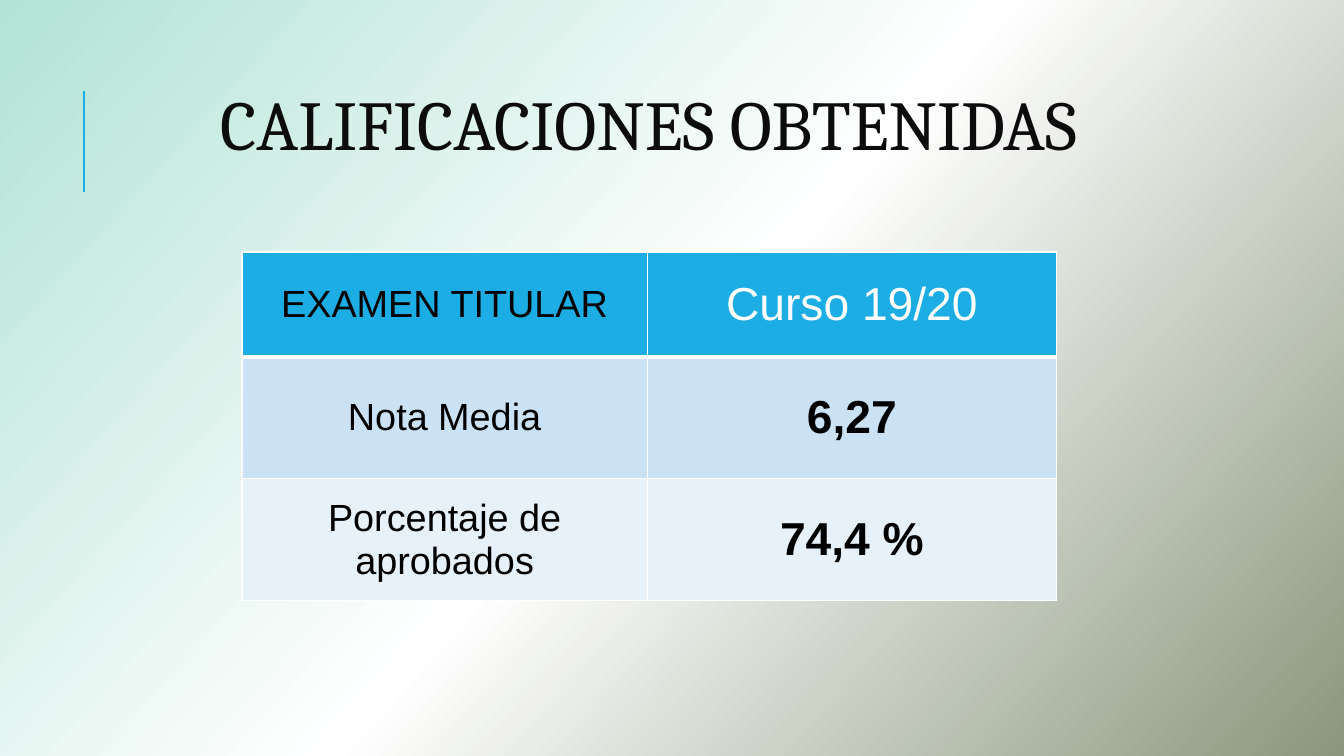
from copy import deepcopy

from lxml.etree import SubElement
from pptx import Presentation
from pptx.dml.color import RGBColor
from pptx.enum.shapes import MSO_CONNECTOR
from pptx.enum.text import MSO_ANCHOR, PP_ALIGN
from pptx.oxml.ns import qn
from pptx.util import Inches, Pt

COLORS = {
    "mint": "B2E3D5",
    "white": "FFFFFF",
    "olive": "8A977D",
    "accent": "1CADE4",
    "title": "0C0C0C",
    "black": "000000",
    "band_dark": "CBE2F5",
    "band_light": "E7F1FA",
}
GRADIENT = [(0, "mint"), (0.5, "white"), (1, "olive")]
COL_WIDTHS = [4.02, 4.06]
ROW_HEIGHTS = [1.04, 1.21, 1.21]
ROW_FILLS = ["accent", "band_dark", "band_light"]
GRADES = [
    ("EXAMEN TITULAR", "Curso 19/20"),
    ("Nota Media", "6,27"),
    ("Porcentaje de aprobados", "74,4 %"),
]


def rgb(name):
    return RGBColor.from_string(COLORS[name])


def style_text(tf, size, font, color, bold=False):
    p = tf.paragraphs[0]
    p.alignment = PP_ALIGN.CENTER
    r = p.runs[0]
    r.font.size = Pt(size)
    r.font.name = font
    r.font.bold = bold
    r.font.color.rgb = rgb(color)
    return p


def paint_background(s):
    fill = s.background.fill
    fill.gradient()
    fill.gradient_angle = 360 - 42
    stops = s.element.xpath(".//a:gsLst")[0]
    stops.append(deepcopy(stops[0]))
    for stop, (position, color) in zip(fill.gradient_stops, GRADIENT):
        stop.position = position
        stop.color.rgb = rgb(color)


def add_accent_line(s, x, top, bottom):
    line = s.shapes.add_connector(
        MSO_CONNECTOR.STRAIGHT, Inches(x), Inches(bottom), Inches(x), Inches(top))
    line.line.color.rgb = rgb("accent")
    line.line.width = Pt(1.5)
    SubElement(line.element.spPr, qn("a:effectLst"))


def add_title(s, left, top, width, height):
    sp = s.shapes.add_textbox(Inches(left), Inches(top), Inches(width), Inches(height))
    tf = sp.text_frame
    tf.word_wrap = True
    tf.vertical_anchor = MSO_ANCHOR.MIDDLE
    tf.text = "CALIFICACIONES OBTENIDAS"
    p = style_text(tf, 50, "Cambria", "title")
    p.line_spacing = 0.8


def add_borders(cell, widths):
    tc_pr = cell._tc.get_or_add_tcPr()
    for side, width in widths.items():
        ln = SubElement(tc_pr, qn(f"a:ln{side}"), w=str(Pt(width)))
        fill = SubElement(ln, qn("a:solidFill"))
        SubElement(fill, qn("a:srgbClr"), val=COLORS["white"])


def fill_cell(cell, text, row, col):
    rule_above = 3 if row == 1 else 1
    rule_below = 3 if row == 0 else 1
    add_borders(cell, {"L": 1, "R": 1, "T": rule_above, "B": rule_below})
    cell.fill.solid()
    cell.fill.fore_color.rgb = rgb(ROW_FILLS[row])
    cell.margin_left = cell.margin_right = cell.margin_top = cell.margin_bottom = 0
    cell.vertical_anchor = MSO_ANCHOR.MIDDLE
    cell.text_frame.text = text
    is_value = col == 1
    color = "white" if is_value and row == 0 else "black"
    style_text(cell.text_frame, 33 if is_value else 27, "Arial", color,
               is_value and row > 0)


def add_grades_table(s, left, top):
    table = s.shapes.add_table(
        len(GRADES), len(COL_WIDTHS), Inches(left), Inches(top),
        Inches(sum(COL_WIDTHS)), Inches(sum(ROW_HEIGHTS))).table
    for column, width in zip(table.columns, COL_WIDTHS):
        column.width = Inches(width)
    for row, (table_row, height) in enumerate(zip(table.rows, ROW_HEIGHTS)):
        table_row.height = Inches(height)
        for col, text in enumerate(GRADES[row]):
            fill_cell(table.cell(row, col), text, row, col)


def main():
    prs = Presentation()
    prs.slide_width = Inches(13.33)
    prs.slide_height = Inches(7.5)
    s = prs.slides.add_slide(prs.slide_layouts[6])
    paint_background(s)
    add_accent_line(s, 0.83, 0.9, 1.9)
    add_title(s, 1.12, 0.47, 10.63, 1.64)
    add_grades_table(s, 2.4, 2.5)
    prs.save("out.pptx")


if __name__ == "__main__":
    main()
